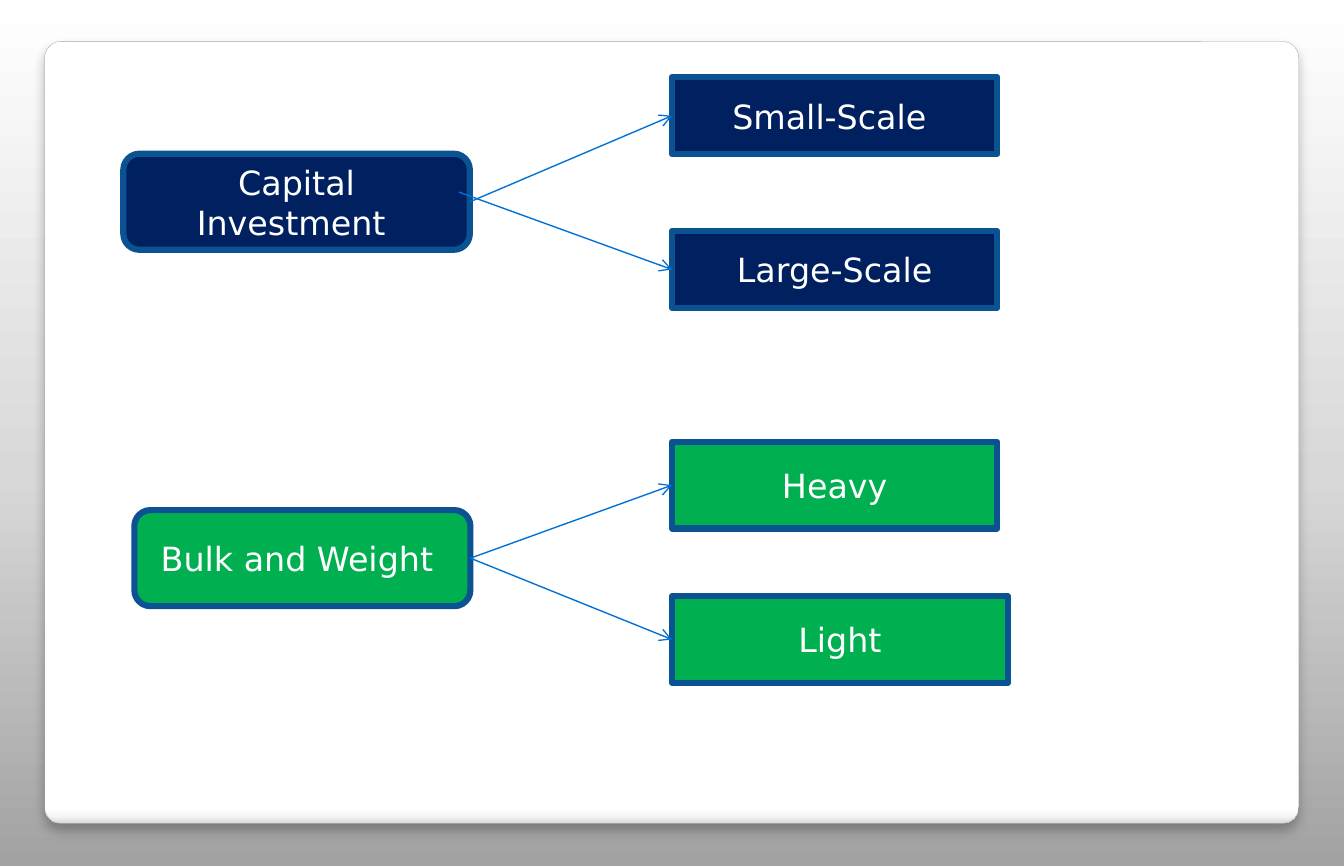
from lxml.etree import SubElement
from pptx import Presentation
from pptx.dml.color import RGBColor
from pptx.enum.shapes import MSO_CONNECTOR, MSO_SHAPE
from pptx.enum.text import MSO_ANCHOR, PP_ALIGN
from pptx.oxml.ns import qn
from pptx.util import Cm, Pt

NAVY = RGBColor(0x00, 0x20, 0x60)
GREEN = RGBColor(0x00, 0xB0, 0x50)
BORDER = RGBColor(0x0B, 0x52, 0x92)
ARROW = RGBColor(0x00, 0x70, 0xD5)
PANEL_EDGE = RGBColor(0xA4, 0xA4, 0xA4)
WHITE = RGBColor(0xFF, 0xFF, 0xFF)
BLACK = RGBColor(0x00, 0x00, 0x00)
SILVER = RGBColor(0xD8, 0xD8, 0xD8)
GREY = RGBColor(0xA2, 0xA2, 0xA2)
PALE = RGBColor(0xF7, 0xF7, 0xF7)
RIM = RGBColor(0xDA, 0xDA, 0xDA)

FONT = "DejaVu Sans"
LEFT_SITE, RIGHT_SITE = 1, 3
BRANCH_LEFT = 12.8


def set_gradient(owner, fill, angle, stops):
    fill.gradient()
    fill.gradient_angle = angle
    stop_list = owner.element.find(".//" + qn("a:gsLst"))
    for default_stop in list(stop_list):
        stop_list.remove(default_stop)
    for percent, color in stops:
        stop = SubElement(stop_list, qn("a:gs"), pos=str(percent * 1000))
        SubElement(stop, qn("a:srgbClr"), val=str(color))


def add_panel(slide):
    panel = slide.shapes.add_shape(
        MSO_SHAPE.ROUNDED_RECTANGLE, Cm(0.85), Cm(0.79), Cm(23.89), Cm(14.9))
    panel.adjustments[0] = 0.021
    set_gradient(panel, panel.fill, 270,
                 [(0, WHITE), (98, WHITE), (99, PALE), (100, RIM)])
    panel.line.color.rgb = PANEL_EDGE
    panel.line.width = Pt(0.16)
    panel.shadow.inherit = False
    effects = panel.element.spPr.find(qn("a:effectLst"))
    shadow = SubElement(effects, qn("a:outerShdw"), blurRad=str(Pt(6)),
                        dist=str(Pt(4)), dir="5400000", rotWithShape="0")
    tint = SubElement(shadow, qn("a:srgbClr"), val=str(BLACK))
    SubElement(tint, qn("a:alpha"), val="25000")


def add_box(slide, preset, label, color, left, top, width, height):
    box = slide.shapes.add_shape(
        preset, Cm(left), Cm(top), Cm(width), Cm(height))
    box.shadow.inherit = False
    box.fill.solid()
    box.fill.fore_color.rgb = color
    box.line.color.rgb = BORDER
    box.line.width = Pt(3.35)
    box.text_frame.text = label
    box.text_frame.word_wrap = True
    box.text_frame.vertical_anchor = MSO_ANCHOR.MIDDLE
    paragraph = box.text_frame.paragraphs[0]
    paragraph.alignment = PP_ALIGN.CENTER
    font = paragraph.runs[0].font
    font.name, font.size, font.color.rgb = FONT, Pt(18), WHITE
    return box


def add_factor(slide, label, color, left, top, width):
    return add_box(slide, MSO_SHAPE.FLOWCHART_ALTERNATE_PROCESS, label, color,
                   left, top, width, 1.83)


def add_branch(slide, label, color, top, width, height):
    return add_box(slide, MSO_SHAPE.RECTANGLE, label, color,
                   BRANCH_LEFT, top, width, height)


def add_arrow(slide, branch, factor=None, start=(0, 0)):
    arrow = slide.shapes.add_connector(
        MSO_CONNECTOR.STRAIGHT, Cm(start[0]), Cm(start[1]),
        branch.left, branch.top)
    if factor is not None:
        arrow.begin_connect(factor, RIGHT_SITE)
    arrow.end_connect(branch, LEFT_SITE)
    arrow.line.color.rgb = ARROW
    arrow.line.width = Pt(0.75)
    properties = arrow.element.spPr
    SubElement(properties.find(qn("a:ln")), qn("a:tailEnd"), type="arrow")
    SubElement(properties, qn("a:effectLst"))


def main():
    presentation = Presentation()
    presentation.slide_width = Cm(25.6)
    presentation.slide_height = Cm(16.5)
    slide = presentation.slides.add_slide(presentation.slide_layouts[6])
    set_gradient(slide, slide.background.fill, 90,
                 [(0, GREY), (45, SILVER), (100, WHITE)])
    add_panel(slide)

    capital = add_factor(slide, "Capital Investment ", NAVY, 2.35, 2.93, 6.6)
    small = add_branch(slide, "Small-Scale ", NAVY, 1.47, 6.2, 1.47)
    large = add_branch(slide, "Large-Scale", NAVY, 4.4, 6.2, 1.47)
    bulk = add_factor(slide, "Bulk and Weight ", GREEN, 2.56, 9.72, 6.4)
    heavy = add_branch(slide, "Heavy", GREEN, 8.42, 6.2, 1.65)
    light = add_branch(slide, "Light", GREEN, 11.36, 6.4, 1.65)

    add_arrow(slide, large, start=(8.74, 3.66))
    add_arrow(slide, small, capital)
    add_arrow(slide, light, bulk)
    add_arrow(slide, heavy, bulk)
    presentation.save("out.pptx")


if __name__ == "__main__":
    main()
